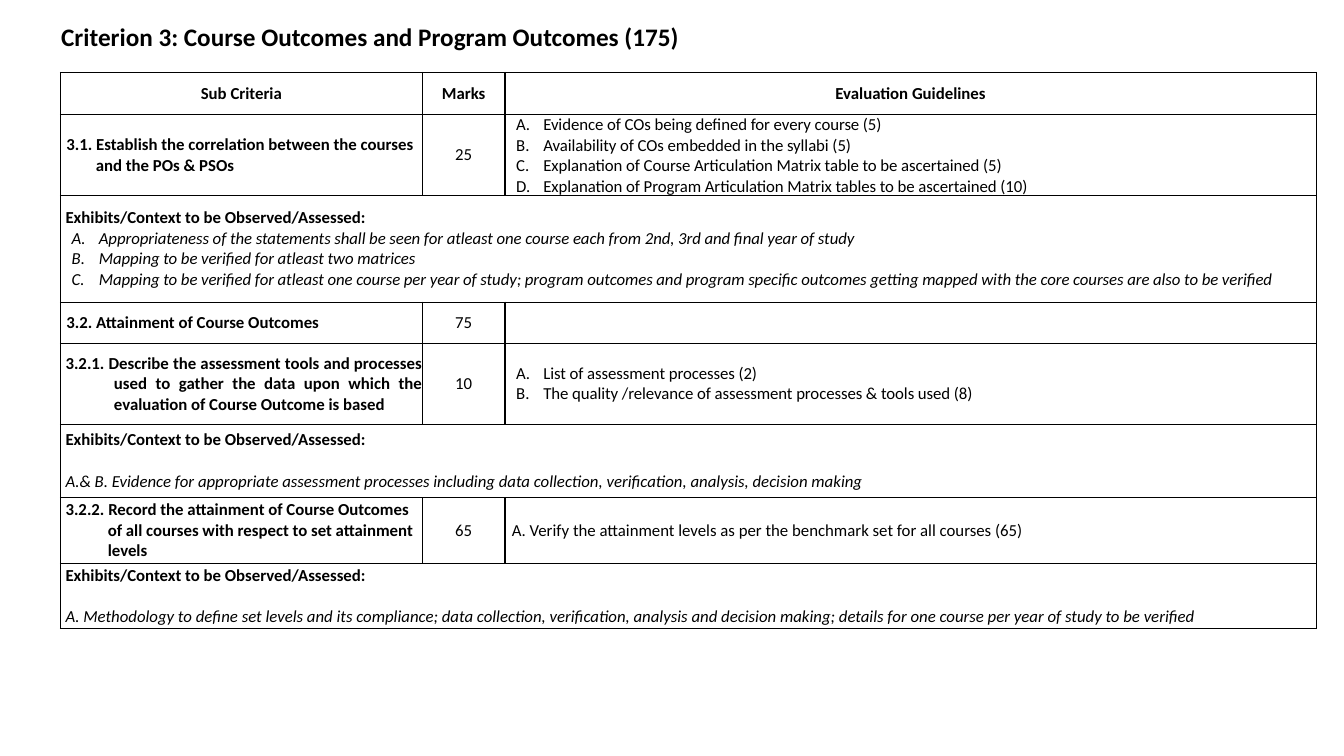
from lxml import etree
from pptx import Presentation
from pptx.dml.color import RGBColor
from pptx.enum.text import MSO_ANCHOR, PP_ALIGN
from pptx.oxml.ns import qn
from pptx.util import Pt

LEFT, CENTER, JUSTIFY = PP_ALIGN.LEFT, PP_ALIGN.CENTER, PP_ALIGN.JUSTIFY
MIDDLE = MSO_ANCHOR.MIDDLE
COLORS = {"ink": "000000"}
FONT = "Calibri"
TITLE = "Criterion 3: Course Outcomes and Program Outcomes (175)"
EXHIBITS = ("exhibit", "Exhibits/Context to be Observed/Assessed:")

# style: bold, italic, alignment, left margin, first-line indent, space before, numbered
STYLES = {
    "head": (True, False, CENTER, 0, 0, 0, False),
    "marks": (False, False, CENTER, 0, 0, 0, False),
    "section": (True, False, LEFT, 25.2, -21, 0, False),
    "tools": (True, False, JUSTIFY, 38.2, -34.6, 0, False),
    "record": (True, False, LEFT, 33.8, -30.2, 0, False),
    "guide": (False, False, LEFT, 27.4, -19.4, 0, True),
    "verify": (False, False, LEFT, 5, 0, 0, False),
    "exhibit": (True, False, LEFT, 3.6, 0, 0, False),
    "context": (False, True, LEFT, 27.4, -19.4, 0, True),
    "evidence": (False, True, LEFT, 3.6, 0, 15, False),
}
COLUMNS = (258.5, 59, 579.6)
ROWS = [
    (30.2, [[("head", "Sub Criteria")], [("head", "Marks")],
            [("head", "Evaluation Guidelines")]]),
    (57.6, [[("section", "3.1. Establish the correlation between the courses and the POs & PSOs")],
            [("marks", "25")],
            [("guide", "Evidence of COs being defined for every course (5)"),
             ("guide", "Availability of COs embedded in the syllabi (5)"),
             ("guide", "Explanation of Course Articulation Matrix table to be ascertained (5)"),
             ("guide", "Explanation of Program Articulation Matrix tables to be ascertained (10)")]]),
    (76.3, [[EXHIBITS,
             ("context", "Appropriateness of the statements shall be seen for atleast one course "
                         "each from 2nd, 3rd and final year of study"),
             ("context", "Mapping to be verified for atleast two matrices"),
             ("context", "Mapping to be verified for atleast one course per year of study; program "
                         "outcomes and program specific outcomes getting mapped with the core "
                         "courses are also to be verified")]]),
    (29.5, [[("section", "3.2. Attainment of Course Outcomes")], [("marks", "75")], []]),
    (57.6, [[("tools", "3.2.1. Describe the assessment tools and processes used to gather the data "
                       "upon which the evaluation of Course Outcome is based")],
            [("marks", "10")],
            [("guide", "List of assessment processes (2)"),
             ("guide", "The quality /relevance of assessment processes & tools used (8)")]]),
    (52.6, [[EXHIBITS,
             ("evidence", "A.& B. Evidence for appropriate assessment processes including data "
                          "collection, verification, analysis, decision making")]]),
    (46.8, [[("record", "3.2.2. Record the attainment of Course Outcomes of all courses with "
                        "respect to set attainment levels")],
            [("marks", "65")],
            [("verify", "A. Verify the attainment levels as per the benchmark set for all courses (65)")]]),
    (46.8, [[EXHIBITS,
             ("evidence", "A. Methodology to define set levels and its compliance; data collection, "
                          "verification, analysis and decision making; details for one course per "
                          "year of study to be verified")]]),
]


def format_run(r, size, bold, italic=False):
    """Set the font of one run."""
    r.font.name, r.font.size = FONT, Pt(size)
    r.font.bold, r.font.italic = bold, italic
    r.font.color.rgb = RGBColor.from_string(COLORS["ink"])


def write_paragraph(p, style, text):
    """Write one styled paragraph of a cell."""
    bold, italic, align, margin, indent, before, numbered = STYLES[style]
    p.text, p.alignment, p.space_before = text, align, Pt(before)
    pPr = p._p.get_or_add_pPr()
    pPr.set("marL", str(Pt(margin)))
    pPr.set("indent", str(Pt(indent)))
    r = p.runs[0]
    format_run(r, 12, bold, italic)
    if numbered:
        etree.SubElement(pPr, qn("a:buAutoNum"), type="alphaUcPeriod")
        r.font._element.set("spc", "-5")


def style_cell(cell):
    """Clear the fill and insets of a cell and draw its borders."""
    cell.margin_left = cell.margin_right = cell.margin_top = cell.margin_bottom = 0
    cell.vertical_anchor = MIDDLE
    cell.fill.background()
    tcPr = cell._tc.get_or_add_tcPr()
    for i, side in enumerate(("a:lnL", "a:lnR", "a:lnT", "a:lnB")):
        ln = etree.Element(qn(side), w=str(Pt(1)))
        fill = etree.SubElement(ln, qn("a:solidFill"))
        etree.SubElement(fill, qn("a:srgbClr"), val=COLORS["ink"])
        tcPr.insert(i, ln)


def add_title(s):
    """Add the slide heading."""
    tf = s.shapes.add_textbox(Pt(29.5), Pt(11.5), Pt(508.3), Pt(28.8)).text_frame
    tf.word_wrap = True
    tf.margin_left = Pt(14.2)
    tf.text = TITLE
    format_run(tf.paragraphs[0].runs[0], 18, True)


def add_criteria(s):
    """Add the table of criteria."""
    height = sum(h for h, _ in ROWS)
    table = s.shapes.add_table(len(ROWS), len(COLUMNS), Pt(43.2), Pt(51.8),
                               Pt(sum(COLUMNS)), Pt(height)).table
    table.first_row = table.horz_banding = False
    for column, width in zip(table.columns, COLUMNS):
        column.width = Pt(width)
    for i, (height, cells) in enumerate(ROWS):
        table.rows[i].height = Pt(height)
        for cell in table.rows[i].cells:
            style_cell(cell)
        if len(cells) == 1:
            table.cell(i, 0).merge(table.cell(i, len(COLUMNS) - 1))
        for j, paragraphs in enumerate(cells):
            tf = table.cell(i, j).text_frame
            for k, (style, text) in enumerate(paragraphs):
                write_paragraph(tf.add_paragraph() if k else tf.paragraphs[0], style, text)


def main():
    """Build the slide."""
    prs = Presentation()
    prs.slide_width, prs.slide_height = Pt(960), Pt(540)
    s = prs.slides.add_slide(prs.slide_layouts[6])
    add_title(s)
    add_criteria(s)
    prs.save("out.pptx")


if __name__ == "__main__":
    main()
